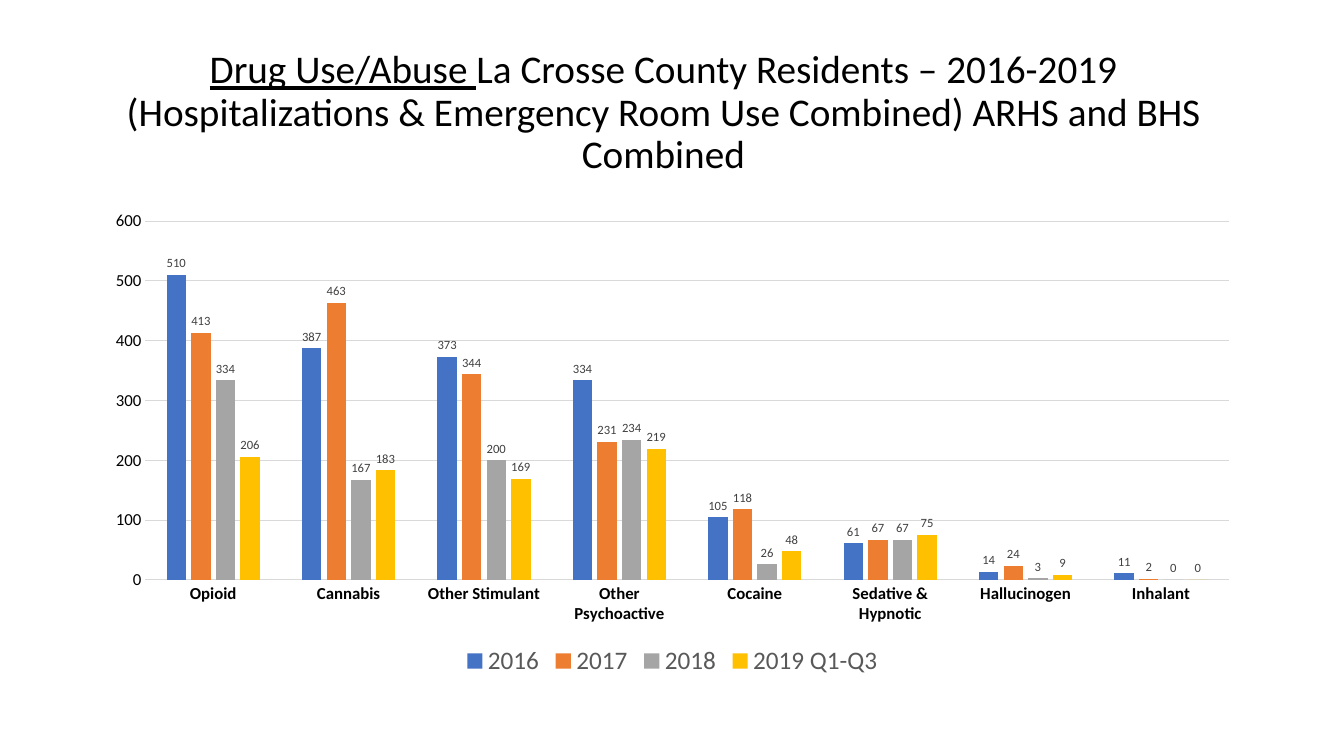
from dataclasses import dataclass

from pptx import Presentation
from pptx.chart.data import CategoryChartData
from pptx.dml.color import RGBColor as Rgb
from pptx.enum.chart import XL_CHART_TYPE as Kind
from pptx.enum.chart import XL_LABEL_POSITION as Spot
from pptx.enum.chart import XL_LEGEND_POSITION as Side
from pptx.enum.chart import XL_TICK_MARK as Tick
from pptx.enum.text import MSO_ANCHOR as Anchor
from pptx.enum.text import PP_ALIGN as Align
from pptx.util import Inches, Pt


@dataclass(frozen=True)
class Theme:
    font: str = "Calibri"
    ink: str = "000000"
    grid: str = "D9D9D9"
    label: str = "404040"
    key: str = "595959"
    bars: tuple = ("4472C4", "ED7D31", "A5A5A5", "FFC000")
    title_size: int = 28
    key_size: int = 18
    axis_size: int = 12
    label_size: int = 9


class Page:
    """One slide on a grid of 40 columns by 30 rows."""

    def __init__(self, deck, theme):
        self.theme = theme
        self.slide = deck.slides.add_slide(deck.slide_layouts[6])
        self.col = deck.slide_width / 40
        self.row = deck.slide_height / 30

    def box(self, left, top, width, height):
        return (round(left * self.col), round(top * self.row),
                round(width * self.col), round(height * self.row))

    def style(self, font, size, color, bold=False):
        font.name = self.theme.font
        font.size = Pt(size)
        font.bold = bold
        font.color.rgb = Rgb.from_string(color)

    def rule(self, line):
        line.color.rgb = Rgb.from_string(self.theme.grid)
        line.width = Pt(0.75)

    def title(self, area, lead, lines):
        frame = self.slide.shapes.add_textbox(*self.box(*area)).text_frame
        frame.word_wrap = True
        frame.vertical_anchor = Anchor.MIDDLE
        para = frame.paragraphs[0]
        para.alignment = Align.CENTER
        para.line_spacing = 0.9
        para.text = lead
        para.runs[0].font.underline = True
        for i, line in enumerate(lines):
            if i:
                para.add_line_break()
            para.add_run().text = line
        for run in para.runs:
            self.style(run.font, self.theme.title_size, self.theme.ink)

    def columns(self, area, cats, series, top, step):
        look = self.theme
        data = CategoryChartData()
        data.categories = cats
        for name, vals in series.items():
            data.add_series(name, vals)
        chart = self.slide.shapes.add_chart(
            Kind.COLUMN_CLUSTERED, *self.box(*area), data).chart
        chart.has_title = False
        self.style(chart.font, 10, look.ink)

        # Bars and their values
        plot = chart.plots[0]
        plot.gap_width = 219
        plot.overlap = -27
        plot.vary_by_categories = False
        for bar, color in zip(plot.series, look.bars):
            bar.format.fill.solid()
            bar.format.fill.fore_color.rgb = Rgb.from_string(color)
            bar.invert_if_negative = False
            tags = bar.data_labels
            tags.show_value = True
            tags.position = Spot.OUTSIDE_END
            self.style(tags.font, look.label_size, look.label)

        # Axes
        cat, val = chart.category_axis, chart.value_axis
        for axis in (cat, val):
            axis.major_tick_mark = axis.minor_tick_mark = Tick.NONE
            self.style(axis.tick_labels.font, look.axis_size, look.ink,
                       bold=axis is cat)
        self.rule(cat.format.line)
        val.format.line.fill.background()
        val.minimum_scale, val.maximum_scale = 0, top
        val.major_unit = step
        val.has_major_gridlines = True
        self.rule(val.major_gridlines.format.line)

        # Legend
        chart.has_legend = True
        chart.legend.position = Side.BOTTOM
        chart.legend.include_in_layout = False
        self.style(chart.legend.font, look.key_size, look.key)


def main():
    deck = Presentation()
    deck.slide_width, deck.slide_height = Inches(13.33), Inches(7.5)
    page = Page(deck, Theme())

    # Heading
    page.title((1.02, 1.6, 37.45, 5.8), "Drug Use/Abuse ", [
        "La Crosse County Residents – 2016-2019",
        "(Hospitalizations & Emergency Room Use Combined) "
        "ARHS and BHS Combined"])

    # Cases per drug and year
    cats = ["Opioid", "Cannabis", "Other Stimulant", "Other Psychoactive",
            "Cocaine", "Sedative & Hypnotic", "Hallucinogen", "Inhalant"]
    cases = {
        "2016": (510, 387, 373, 334, 105, 61, 14, 11),
        "2017": (413, 463, 344, 231, 118, 67, 24, 2),
        "2018": (334, 167, 200, 234, 26, 67, 3, 0),
        "2019 Q1-Q3": (206, 183, 169, 219, 48, 75, 9, 0),
    }
    page.columns((2.76, 8, 34.5, 19.04), cats, cases, top=600, step=100)

    deck.save("out.pptx")


if __name__ == "__main__":
    main()
